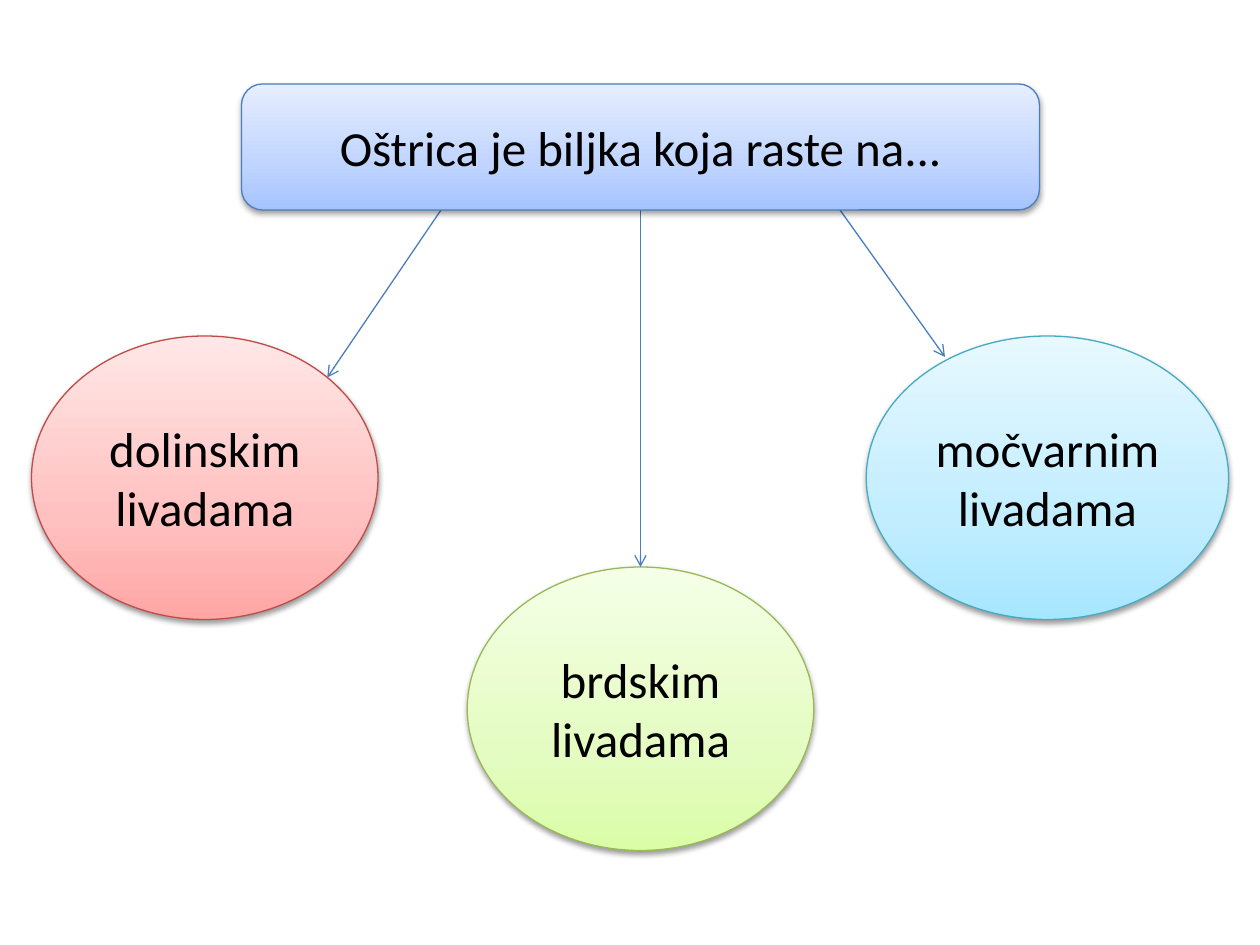
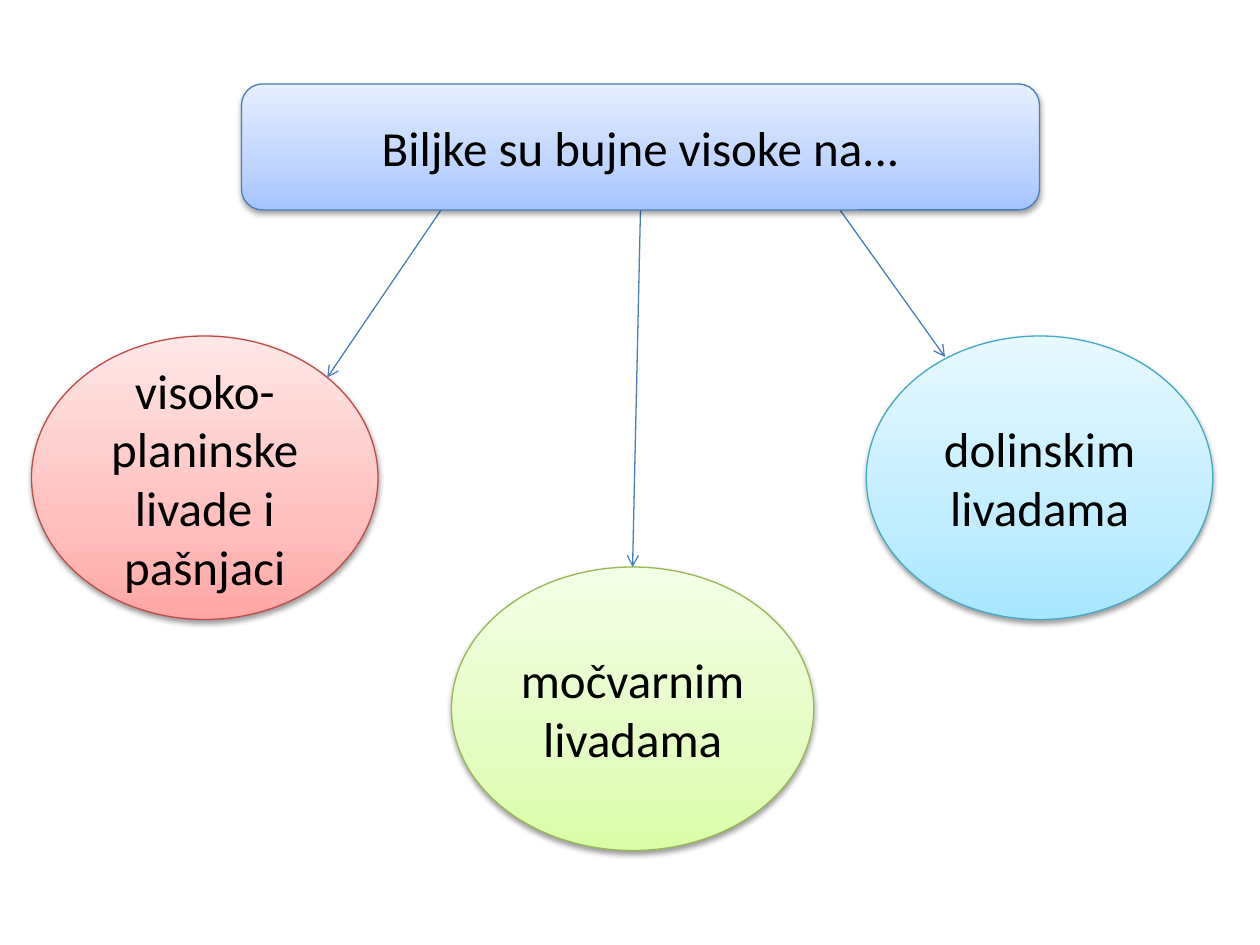
"""Build two slides, each with a heading that points to three kinds of meadow."""
from copy import deepcopy
from math import sqrt

from lxml.etree import SubElement
from pptx import Presentation
from pptx.dml.color import RGBColor
from pptx.enum.shapes import MSO_CONNECTOR, MSO_SHAPE
from pptx.enum.text import MSO_ANCHOR, PP_ALIGN
from pptx.oxml.ns import qn
from pptx.util import Inches, Pt

NARROW, WIDE = 66, 69
SLIDES = [
    ("Oštrica je biljka koja raste na...", [
        ("dolinskim livadama", 6, NARROW),
        ("brdskim livadama", 89, NARROW),
        ("močvarnim livadama", 165, WIDE),
    ]),
    ("Biljke su bujne visoke na...", [
        ("visoko-planinske livade i pašnjaci", 6, NARROW),
        ("močvarnim livadama", 86, WIDE),
        ("dolinskim livadama", 165, NARROW),
    ]),
]

COLUMNS, ROWS = 240, 180
HEADING_BOX = (46, 16, 152, 24)
OVAL_TOPS = (64, 108, 64)
OVAL_HEIGHT = 54
RIGHT_ARROW_END = (180, 68)

BLACK = RGBColor(0x00, 0x00, 0x00)
BLUE_LINE = RGBColor(0x4B, 0x7E, 0xBC)
BLUE_STOPS = (RGBColor(0xA4, 0xC4, 0xFF), RGBColor(0xBF, 0xD4, 0xFF), RGBColor(0xE6, 0xEE, 0xFF))
RED_LINE = RGBColor(0xBF, 0x4C, 0x48)
RED_STOPS = (RGBColor(0xFF, 0xA6, 0xA5), RGBColor(0xFF, 0xC0, 0xBF), RGBColor(0xFF, 0xE7, 0xE7))
GREEN_LINE = RGBColor(0x98, 0xB9, 0x55)
GREEN_STOPS = (RGBColor(0xDA, 0xFD, 0xA7), RGBColor(0xE4, 0xFC, 0xC2), RGBColor(0xF5, 0xFF, 0xE7))
AQUA_LINE = RGBColor(0x46, 0xAA, 0xC5)
AQUA_STOPS = (RGBColor(0xA7, 0xE6, 0xFF), RGBColor(0xC1, 0xED, 0xFF), RGBColor(0xE7, 0xF8, 0xFF))
OVAL_STYLES = ((RED_LINE, RED_STOPS), (GREEN_LINE, GREEN_STOPS), (AQUA_LINE, AQUA_STOPS))
STOP_POSITIONS = (0, 0.35, 1)
LINE_WIDTH = Pt(0.75)

presentation = Presentation()
presentation.slide_width, presentation.slide_height = Inches(10), Inches(7.5)
CELL_WIDTH = presentation.slide_width / COLUMNS
CELL_HEIGHT = presentation.slide_height / ROWS


def to_slide(column, row):
    return round(column * CELL_WIDTH), round(row * CELL_HEIGHT)


def write_text(shape, text, font="Calibri", size=28, color=BLACK, align=PP_ALIGN.CENTER):
    frame = shape.text_frame
    frame.word_wrap = True
    frame.vertical_anchor = MSO_ANCHOR.MIDDLE
    paragraph = frame.paragraphs[0]
    paragraph.alignment = align
    run = paragraph.add_run()
    run.text = text
    run.font.name, run.font.size = font, Pt(size)
    run.font.color.rgb = color


def fill_gradient(shape, colors):
    shape.fill.gradient()
    shape.fill.gradient_angle = 90
    stop_list = shape._element.spPr.find(".//" + qn("a:gsLst"))
    stop_list.insert(1, deepcopy(stop_list[0]))
    for stop, color, position in zip(shape.fill.gradient_stops, colors, STOP_POSITIONS):
        stop.color.rgb = color
        stop.position = position


def add_shadow(shape):
    shape.shadow.inherit = False
    effects = shape._element.spPr.find(qn("a:effectLst"))
    shadow = SubElement(effects, qn("a:outerShdw"), blurRad="40000", dist="20000",
                        dir="5400000", rotWithShape="0")
    color = SubElement(shadow, qn("a:srgbClr"), val=str(BLACK))
    SubElement(color, qn("a:alpha"), val="38000")


def add_bubble(slide, kind, box, text, line_color, colors):
    left, top, width, height = box
    shape = slide.shapes.add_shape(kind, *to_slide(left, top), *to_slide(width, height))
    fill_gradient(shape, colors)
    shape.line.color.rgb, shape.line.width = line_color, LINE_WIDTH
    add_shadow(shape)
    write_text(shape, text)


def add_arrow(slide, start, end):
    arrow = slide.shapes.add_connector(MSO_CONNECTOR.STRAIGHT, *to_slide(*start), *to_slide(*end))
    arrow.line.color.rgb, arrow.line.width = BLUE_LINE, LINE_WIDTH
    SubElement(arrow.line._get_or_add_ln(), qn("a:tailEnd"), type="arrow")
    SubElement(arrow._element.spPr, qn("a:effectLst"))


def arrow_ends(ovals):
    (_, left, left_width), (_, middle, middle_width), _ = ovals
    diagonal = sqrt(0.5)
    left_end = (left + left_width / 2 * (1 + diagonal),
                OVAL_TOPS[0] + OVAL_HEIGHT / 2 * (1 - diagonal))
    middle_end = (middle + middle_width / 2, OVAL_TOPS[1])
    return left_end, middle_end, RIGHT_ARROW_END


def add_diagram(heading, ovals):
    slide = presentation.slides.add_slide(presentation.slide_layouts[6])
    for (text, left, width), top, style in zip(ovals, OVAL_TOPS, OVAL_STYLES):
        add_bubble(slide, MSO_SHAPE.OVAL, (left, top, width, OVAL_HEIGHT), text, *style)
    left, top, width, height = HEADING_BOX
    for quarter, end in enumerate(arrow_ends(ovals), start=1):
        add_arrow(slide, (left + width * quarter / 4, top + height), end)
    add_bubble(slide, MSO_SHAPE.ROUNDED_RECTANGLE, HEADING_BOX, heading, BLUE_LINE, BLUE_STOPS)


for slide_heading, slide_ovals in SLIDES:
    add_diagram(slide_heading, slide_ovals)
presentation.save("out.pptx")
